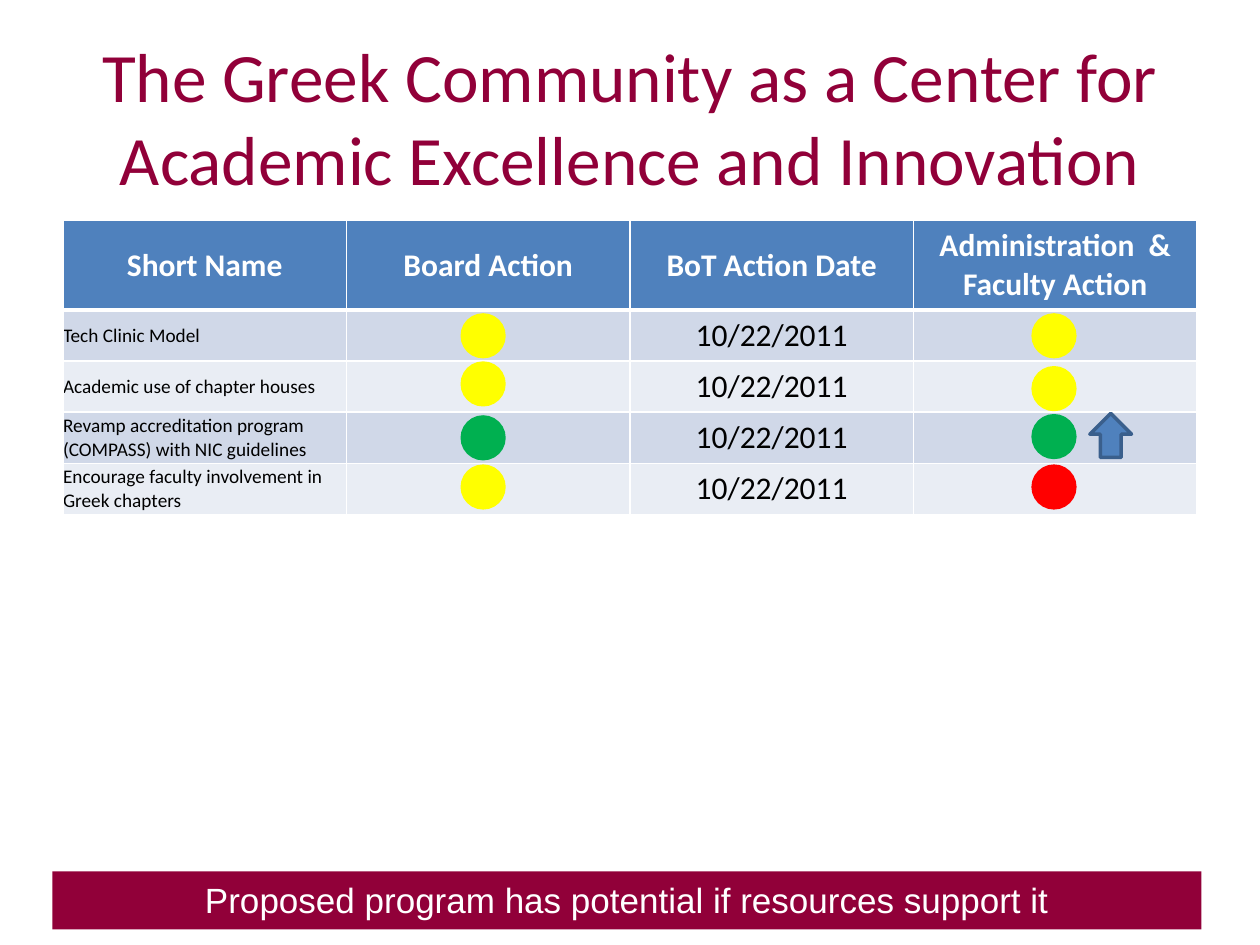
import pptx
import pptx.util
import pptx.dml.color
import pptx.enum.shapes
import pptx.enum.text
import pptx.oxml
import pptx.oxml.ns
from dataclasses import dataclass

Pt = pptx.util.Pt
Shape = pptx.enum.shapes.MSO_SHAPE
Align = pptx.enum.text.PP_ALIGN
Anchor = pptx.enum.text.MSO_ANCHOR


@dataclass(frozen=True)
class Theme:
    maroon: str = "910039"
    blue: str = "4F81BD"
    blue_edge: str = "3A5F8C"
    bands: tuple = ("D0D8E8", "E9EDF4")
    white: str = "FFFFFF"
    black: str = "000000"
    yellow: str = "FFFF00"
    green: str = "00B050"
    red: str = "FF0000"
    body_font: str = "Calibri"
    banner_font: str = "Arial"
    title_size: float = 39.6
    banner_size: float = 20
    table_size: float = 18
    name_size: float = 11


THEME = Theme()
HEADERS = ["Short Name", "Board Action", "BoT Action Date", "Administration  & Faculty Action"]
ACTION_DATE = "10/22/2011"
PROGRAMS = [
    "Tech Clinic Model",
    "Academic use of chapter houses",
    "Revamp accreditation program (COMPASS) with NIC guidelines",
    "Encourage faculty involvement in Greek chapters",
]
BOARD_STATUS = [(54, THEME.yellow), (81.5, THEME.yellow), (112.3, THEME.green), (140.4, THEME.yellow)]
FACULTY_STATUS = [(54, THEME.yellow), (84.2, THEME.yellow), (111.6, THEME.green), (140.4, THEME.red)]
HEADER_HEIGHT = 50.4
ROW_HEIGHT = 29.2


def rgb(color):
    return pptx.dml.color.RGBColor.from_string(color)


def place(shape, box):
    shape.left, shape.top, shape.width, shape.height = map(Pt, box)


def write(frame, text, size, color, font=THEME.body_font, bold=False, align=Align.CENTER):
    frame.text = text
    para = frame.paragraphs[0]
    para.alignment = align
    span = para.runs[0]
    span.font.name, span.font.size, span.font.bold = font, Pt(size), bold
    span.font.color.rgb = rgb(color)


def add_figure(page, kind, box, fill, edge=None):
    figure = page.shapes.add_shape(kind, *map(Pt, box))
    figure.shadow.inherit = False
    figure.fill.solid()
    figure.fill.fore_color.rgb = rgb(fill)
    if edge:
        figure.line.color.rgb = rgb(edge)
        figure.line.width = Pt(2)
    else:
        figure.line.fill.background()
    return figure


def style_cell(cell, fill, bottom=1):
    cell.vertical_anchor = Anchor.MIDDLE
    properties = cell._tc.get_or_add_tcPr()
    for side, width in (("L", 1), ("R", 1), ("T", 1), ("B", bottom)):
        properties.append(pptx.oxml.parse_xml(
            f'<a:ln{side} {pptx.oxml.ns.nsdecls("a")} w="{Pt(width)}"><a:solidFill>'
            f'<a:srgbClr val="{THEME.white}"/></a:solidFill></a:ln{side}>'))
    cell.fill.solid()
    cell.fill.fore_color.rgb = rgb(fill)


def add_title(page, box):
    title = page.shapes.title
    place(title, box)
    title.text_frame.vertical_anchor = Anchor.MIDDLE
    title.text_frame.auto_size = pptx.enum.text.MSO_AUTO_SIZE.NONE
    write(title.text_frame, "The Greek Community as a Center for Academic Excellence and Innovation",
          THEME.title_size, THEME.maroon)


def add_program_table(page, box):
    table = page.shapes.add_table(len(PROGRAMS) + 1, len(HEADERS), *map(Pt, box)).table
    for column in table.columns:
        column.width = Pt(box[2] / len(HEADERS))
    for row in table.rows:
        row.height = Pt(ROW_HEIGHT)
    table.rows[0].height = Pt(HEADER_HEIGHT)
    for index, header in enumerate(HEADERS):
        cell = table.cell(0, index)
        style_cell(cell, THEME.blue, bottom=3)
        write(cell.text_frame, header, THEME.table_size, THEME.white, bold=True)
    for index, program in enumerate(PROGRAMS):
        cells = table.rows[index + 1].cells
        for cell in cells:
            style_cell(cell, THEME.bands[index % 2])
        name, date = cells[0], cells[2]
        name.margin_left = name.margin_right = name.margin_top = name.margin_bottom = 0
        write(name.text_frame, program, THEME.name_size, THEME.black, align=Align.LEFT)
        write(date.text_frame, ACTION_DATE, THEME.table_size, THEME.black)


def add_status_marks(page, box):
    left, top = box[:2]
    size = 23.8
    for offset, marks in ((228.2, BOARD_STATUS), (554.4, FACULTY_STATUS)):
        for drop, color in marks:
            add_figure(page, Shape.OVAL, (left + offset, top + drop, size, size), color, color)
    add_figure(page, Shape.UP_ARROW, (left + 586.8, top + 110.2, size, 25.2),
               THEME.blue, THEME.blue_edge)


def add_banner(page, box):
    banner = add_figure(page, Shape.RECTANGLE, box, THEME.maroon)
    frame = banner.text_frame
    frame.word_wrap = True
    frame.vertical_anchor = Anchor.BOTTOM
    frame.margin_left = frame.margin_right = Pt(7.2)
    frame.margin_top, frame.margin_bottom = Pt(3.6), Pt(5)
    write(frame, "Proposed program has potential if resources support it",
          THEME.banner_size, THEME.white, font=THEME.banner_font)


def main():
    deck = pptx.Presentation()
    deck.slide_width, deck.slide_height = Pt(720), Pt(540)
    page = deck.slides.add_slide(deck.slide_layouts[5])
    table_box = (36, 126, 648, HEADER_HEIGHT + ROW_HEIGHT * len(PROGRAMS))
    add_title(page, (36, 21.6, 648, 90))
    add_program_table(page, table_box)
    add_status_marks(page, table_box)
    add_banner(page, (30, 498, 656.6, 33.1))
    deck.save("out.pptx")


if __name__ == "__main__":
    main()
